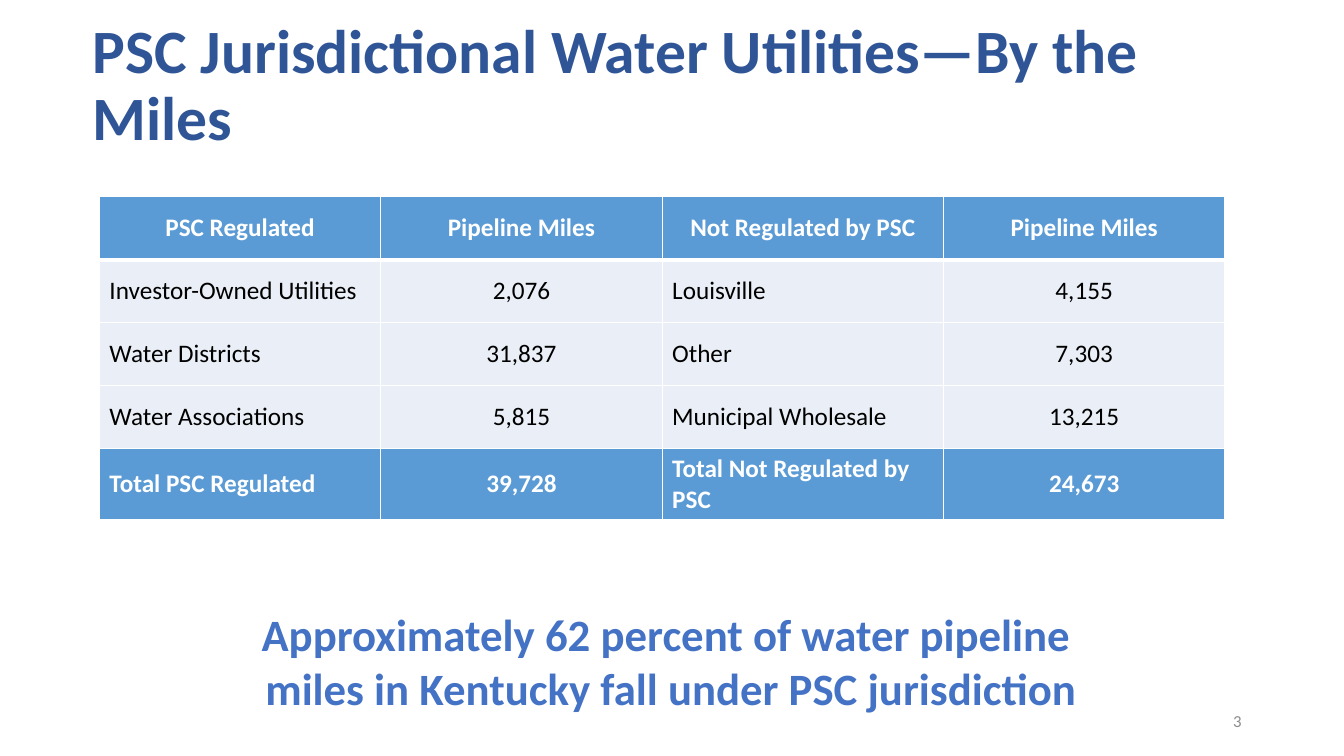
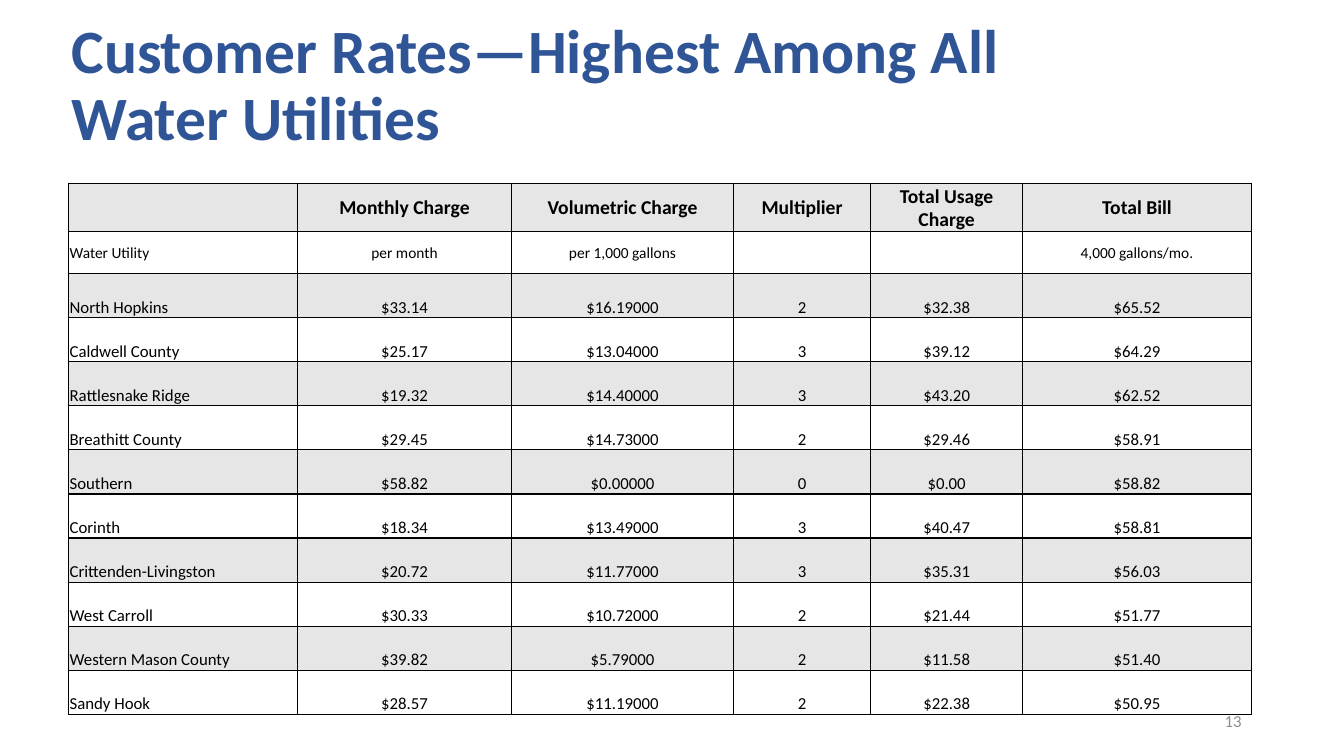
from lxml import etree
from pptx import Presentation
from pptx import util as u
from pptx.dml.color import RGBColor
from pptx.enum import text
from pptx.oxml import ns

NAVY = RGBColor(0x2F, 0x55, 0x97)
ROYAL = RGBColor(0x44, 0x72, 0xC4)
SKY = RGBColor(0x5B, 0x9B, 0xD5)
ICE = RGBColor(0xEA, 0xEF, 0xF7)
SILVER = RGBColor(0xE7, 0xE6, 0xE6)
GREY = RGBColor(0x8C, 0x8C, 0x8C)
WHITE = RGBColor(0xFF, 0xFF, 0xFF)
BLACK = RGBColor(0, 0, 0)

LEFT, CENTER, RIGHT = text.PP_ALIGN.LEFT, text.PP_ALIGN.CENTER, text.PP_ALIGN.RIGHT
TOP, MIDDLE, BOTTOM = text.MSO_ANCHOR.TOP, text.MSO_ANCHOR.MIDDLE, text.MSO_ANCHOR.BOTTOM

MILES = [
    ["PSC Regulated", "Pipeline Miles", "Not Regulated by PSC", "Pipeline Miles"],
    ["Investor-Owned Utilities", "2,076", "Louisville", "4,155"],
    ["Water Districts", "31,837", "Other", "7,303"],
    ["Water Associations", "5,815", "Municipal Wholesale", "13,215"],
    ["Total PSC Regulated", "39,728", "Total Not Regulated by PSC", "24,673"],
]

RATES = [
    ["", "Monthly Charge", "Volumetric Charge", "Multiplier", "Total Usage Charge", "Total Bill"],
    ["Water Utility", "per month", "per 1,000 gallons", "", "", "4,000 gallons/mo."],
    ["North Hopkins", "$33.14", "$16.19000", "2", "$32.38", "$65.52"],
    ["Caldwell County", "$25.17", "$13.04000", "3", "$39.12", "$64.29"],
    ["Rattlesnake Ridge", "$19.32", "$14.40000", "3", "$43.20", "$62.52"],
    ["Breathitt County", "$29.45", "$14.73000", "2", "$29.46", "$58.91"],
    ["Southern", "$58.82", "$0.00000", "0", "$0.00", "$58.82"],
    ["Corinth", "$18.34", "$13.49000", "3", "$40.47", "$58.81"],
    ["Crittenden-Livingston", "$20.72", "$11.77000", "3", "$35.31", "$56.03"],
    ["West Carroll", "$30.33", "$10.72000", "2", "$21.44", "$51.77"],
    ["Western Mason County", "$39.82", "$5.79000", "2", "$11.58", "$51.40"],
    ["Sandy Hook", "$28.57", "$11.19000", "2", "$22.38", "$50.95"],
]


class Deck:
    font = "Calibri"

    def __init__(self):
        self.presentation = Presentation()
        self.presentation.slide_width = u.Pt(960)
        self.presentation.slide_height = u.Pt(540)
        self.slide = None

    def new_slide(self):
        layout = self.presentation.slide_layouts[6]
        self.slide = self.presentation.slides.add_slide(layout)

    def style(self, paragraph, size, color, bold, align):
        paragraph.alignment = align
        font = paragraph.font
        font.name, font.size, font.bold = self.font, u.Pt(size), bold
        font.color.rgb = color

    def text_box(self, lines, box, size, color, bold=False, align=LEFT, anchor=TOP, spacing=1.0):
        shape = self.slide.shapes.add_textbox(*map(u.Pt, box))
        frame = shape.text_frame
        frame.word_wrap = True
        frame.vertical_anchor = anchor
        frame.text = "\n".join(lines)
        for paragraph in frame.paragraphs:
            self.style(paragraph, size, color, bold, align)
            paragraph.line_spacing = spacing

    def title(self, wording, left):
        self.text_box([wording], (left, 10, 828, 104.5), 44, NAVY, True, anchor=MIDDLE, spacing=0.9)

    def page_number(self, number):
        self.text_box([str(number)], (678, 500.5, 216, 28.8), 12, GREY, align=RIGHT, anchor=MIDDLE)

    def borders(self, cell, color, top=1, bottom=1):
        properties = cell._tc.get_or_add_tcPr()
        sides = {"lnL": 1, "lnR": 1, "lnT": top, "lnB": bottom}
        for index, (side, width) in enumerate(sides.items()):
            line = etree.Element(ns.qn("a:" + side), w=str(u.Pt(width)))
            fill = etree.SubElement(line, ns.qn("a:solidFill"))
            etree.SubElement(fill, ns.qn("a:srgbClr"), val=str(color))
            properties.insert(index, line)

    def table(self, rows, left, top, widths, heights, row_style, left_columns, line, header_line=1, margins=None):
        frame = self.slide.shapes.add_table(
            len(rows), len(widths), u.Pt(left), u.Pt(top), u.Pt(sum(widths)), u.Pt(sum(heights)))
        table = frame.table
        table.first_row = table.horz_banding = False
        for column, width in zip(table.columns, widths):
            column.width = u.Pt(width)
        for r, (values, height) in enumerate(zip(rows, heights)):
            table.rows[r].height = u.Pt(height)
            size, color, bold, fill, anchor = row_style(r)
            for c, value in enumerate(values):
                cell = table.cell(r, c)
                cell.text = value
                cell.vertical_anchor = anchor
                if margins:
                    (cell.margin_left, cell.margin_top,
                     cell.margin_right, cell.margin_bottom) = map(u.Pt, margins)
                align = LEFT if r > 0 and c in left_columns else CENTER
                self.style(cell.text_frame.paragraphs[0], size, color, bold, align)
                self.borders(cell, line,
                             top=header_line if r == 1 else 1,
                             bottom=header_line if r == 0 else 1)
                cell.fill.solid()
                cell.fill.fore_color.rgb = fill

    def save(self):
        self.presentation.save("out.pptx")


def miles_row(row):
    if row in (0, len(MILES) - 1):
        return 18, WHITE, True, SKY, MIDDLE
    return 18, BLACK, False, ICE, MIDDLE


def rates_row(row):
    fill = WHITE if row % 2 else SILVER
    size = {0: 14, 1: 11}.get(row, 12)
    return size, BLACK, row == 0, fill, MIDDLE if row < 2 else BOTTOM


def main():
    deck = Deck()

    deck.new_slide()
    deck.title("PSC Jurisdictional Water Utilities—By the Miles", 59)
    deck.table(MILES, 71, 140.5, [201] * 4, [45] * 5, miles_row, (0, 2), WHITE, header_line=3)
    deck.text_box(
        ["Approximately 62 percent of water pipeline ", "miles in Kentucky fall under PSC jurisdiction"],
        (96.5, 430, 766, 85), 32, ROYAL, True, CENTER)
    deck.page_number(3)

    deck.new_slide()
    deck.title("Customer Rates—Highest Among All\vWater Utilities", 44)
    deck.page_number(13)
    deck.table(
        RATES, 49, 131, [163.5, 153, 158.5, 98, 108.5, 163.5], [34, 30] + [31.5] * 10,
        rates_row, (0,), BLACK, margins=(0.72, 0.72, 0.72, 0))

    deck.save()


if __name__ == "__main__":
    main()
